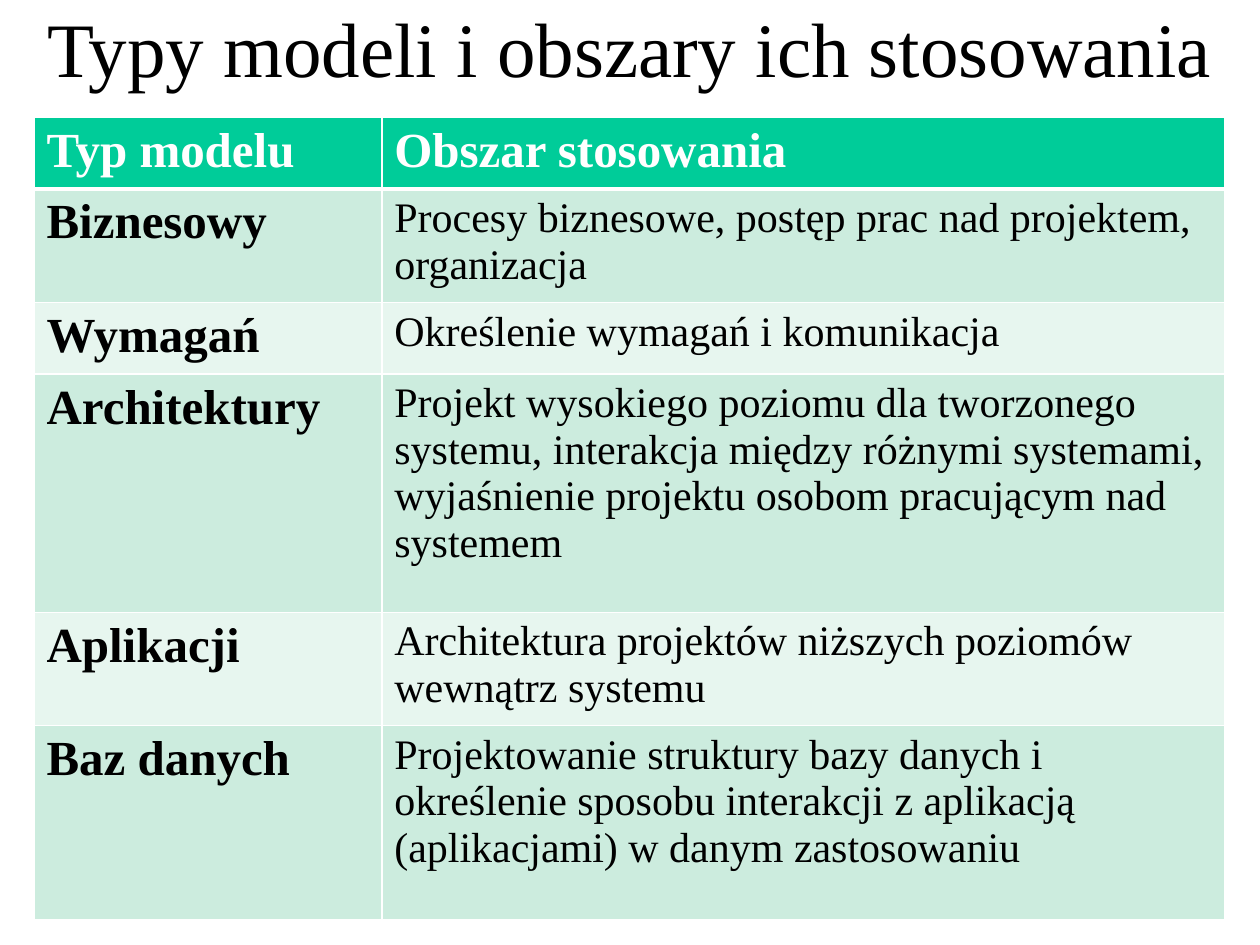
from lxml.etree import SubElement
from pptx import Presentation
from pptx.dml.color import RGBColor
from pptx.enum.text import MSO_ANCHOR as Anchor, PP_ALIGN as Align
from pptx.oxml.ns import qn
from pptx.util import Inches, Pt

AREAS = [
    ("Typ modelu", "Obszar stosowania"),
    ("Biznesowy", "Procesy biznesowe, postęp prac nad projektem, organizacja"),
    ("Wymagań", "Określenie wymagań i komunikacja"),
    ("Architektury", "Projekt wysokiego poziomu dla tworzonego systemu, interakcja "
     "między różnymi systemami, wyjaśnienie projektu osobom pracującym nad systemem"),
    ("Aplikacji", "Architektura projektów niższych poziomów wewnątrz systemu"),
    ("Baz danych", "Projektowanie struktury bazy danych i określenie sposobu "
     "interakcji z aplikacją (aplikacjami) w danym zastosowaniu"),
]
COLUMN_WIDTHS = [2.76, 6.69]
ROW_HEIGHTS = [0.57, 0.9, 0.57, 1.89, 0.9, 1.54]


def color(value):
    return RGBColor.from_string(value)


class ModelSlide:
    """Holds the style and the current slide, and draws its elements."""

    font_name = "Times New Roman"
    ink, paper, accent = "000000", "FFFFFF", "00CC99"
    bands = ("E7F6EF", "CCECDE")

    def __init__(self, slide):
        self.slide = slide

    def set_text(self, frame, text, size, ink, bold=False, align=Align.LEFT):
        frame.word_wrap = True
        paragraph = frame.paragraphs[0]
        paragraph.text = text
        paragraph.alignment = align
        font = paragraph.font
        font.name, font.size, font.bold = self.font_name, Pt(size), bold
        font.color.rgb = color(ink)

    def title(self, text, left, top, width, height):
        box = self.slide.shapes.add_textbox(*map(Inches, (left, top, width, height)))
        box.text_frame.vertical_anchor = Anchor.MIDDLE
        self.set_text(box.text_frame, text, 44, self.ink, align=Align.CENTER)

    def border(self, cell, sides):
        properties = cell._tc.get_or_add_tcPr()
        for side, points in sides.items():
            line = SubElement(properties, qn(f"a:ln{side}"), w=str(Pt(points)))
            fill = SubElement(line, qn("a:solidFill"))
            SubElement(fill, qn("a:srgbClr"), val=self.paper)

    def table(self, rows, left, top, widths, heights):
        frame = self.slide.shapes.add_table(
            len(rows), len(widths),
            *map(Inches, (left, top, sum(widths), sum(heights))))
        grid = frame.table
        for column, width in zip(grid.columns, widths):
            column.width = Inches(width)
        for row, height in zip(grid.rows, heights):
            row.height = Inches(height)
        for r, texts in enumerate(rows):
            header = r == 0
            for c, text in enumerate(texts):
                cell = grid.cell(r, c)
                self.border(cell, {"L": 1, "R": 1, "T": 3 if r == 1 else 1,
                                   "B": 3 if header else 1})
                cell.fill.solid()
                cell.fill.fore_color.rgb = color(self.accent if header else self.bands[r % 2])
                strong = header or c == 0
                self.set_text(cell.text_frame, text, 28 if strong else 24,
                              self.paper if header else self.ink, strong)


def main():
    deck = Presentation()
    deck.slide_width, deck.slide_height = Inches(10), Inches(7.5)
    page = ModelSlide(deck.slides.add_slide(deck.slide_layouts[6]))
    page.title("Typy modeli i obszary ich stosowania", 0, -0.03, 10, 0.8)
    page.table(AREAS, 0.27, 0.93, COLUMN_WIDTHS, ROW_HEIGHTS)
    deck.save("out.pptx")


if __name__ == "__main__":
    main()
